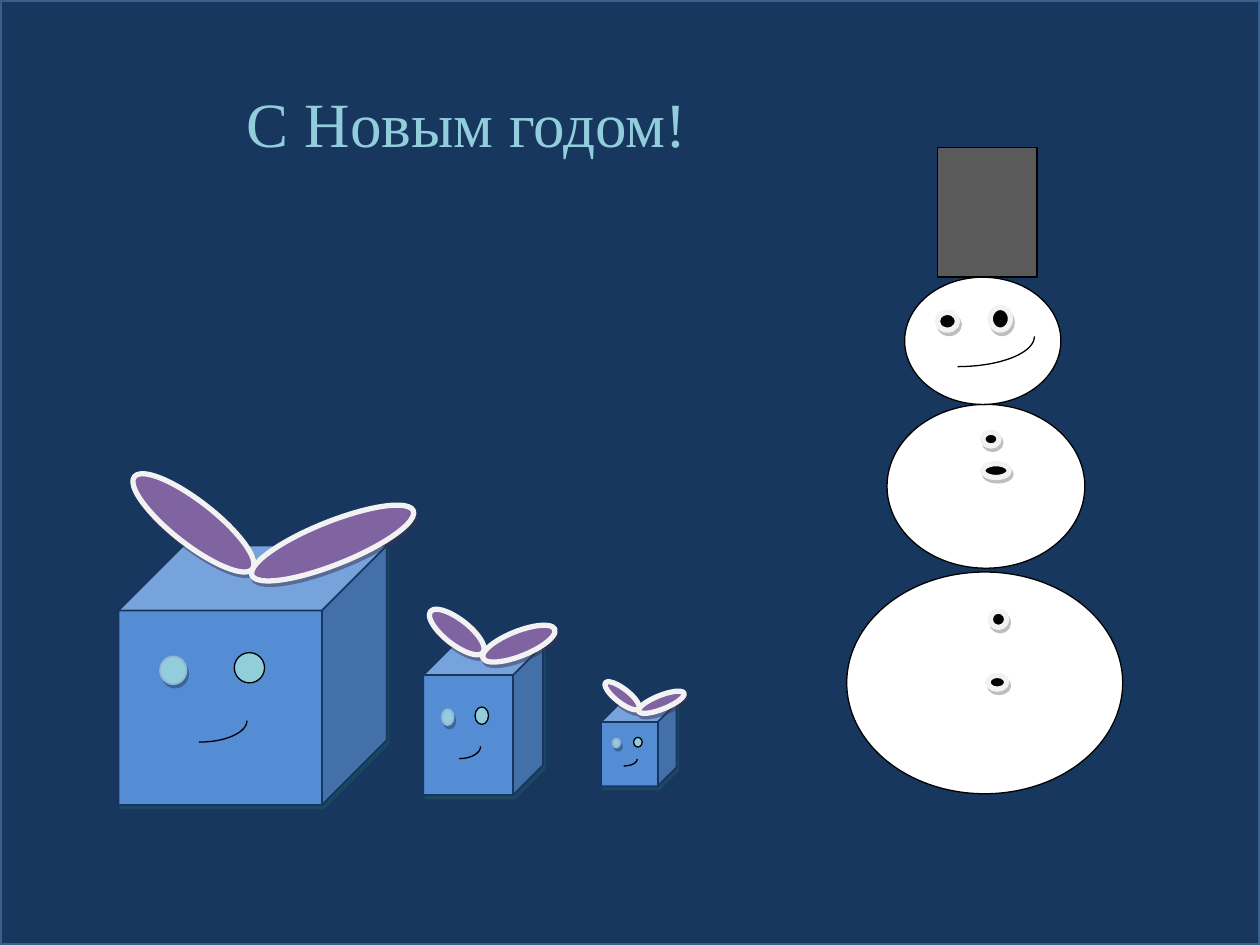
import math

from lxml import etree
from pptx import Presentation
from pptx.dml.color import RGBColor
from pptx.enum.shapes import MSO_SHAPE
from pptx.enum.text import MSO_ANCHOR, PP_ALIGN
from pptx.oxml.ns import qn
from pptx.util import Inches, Pt

RECT = MSO_SHAPE.RECTANGLE
DISC = MSO_SHAPE.FLOWCHART_CONNECTOR
OVAL = MSO_SHAPE.OVAL
CUBE = MSO_SHAPE.CUBE
TOP = MSO_ANCHOR.TOP
CENTER = PP_ALIGN.CENTER

COLORS = {
    "night": "17375E", "frame": "3A5F8C",
    "snow": "FFFFFF", "ink": "000000", "hat": "5A5A5A",
    "rim": "F2F2F2", "button_shadow": "7F7F7F",
    "body": "548DD4", "body_edge": "17365D", "body_shadow": "205867",
    "ear": "8064A2", "ear_shadow": "3F3151",
    "aqua": "92CDDC", "eye_edge": "95B3D7", "eye_shadow": "243F60",
}

# fill, line, line width in points, shadow
LOOKS = {
    "sky": ("night", "frame", 2, None),
    "snowball": ("snow", "ink", 0.75, None),
    "hat": ("hat", "ink", 0.75, None),
    "button": ("ink", "rim", 3, "button_shadow"),
    "body": ("body", "body_edge", 1, "body_shadow"),
    "ear": ("ear", "rim", 3, "ear_shadow"),
    "soft_eye": ("aqua", "eye_edge", 1, "eye_shadow"),
    "bold_eye": ("aqua", "ink", 0.75, None),
}

SNOWBALLS = [(6.72, 4.54, 2.19, 1.76), (7.04, 3.21, 1.57, 1.3), (7.18, 2.2, 1.24, 1.01)]
BUTTONS = [(7.8, 3.43, 0.13, 0.11), (7.8, 3.68, 0.21, 0.11),
           (7.86, 4.85, 0.13, 0.13), (7.84, 5.36, 0.15, 0.11)]
SNOWMAN_HAT = (7.44, 1.17, 0.79, 1.03)
SNOWMAN_EYES = [(7.44, 2.48, 0.16, 0.14), (7.86, 2.44, 0.16, 0.18)]
SNOWMAN_SMILE = (7.6, 2.67, 0.61, 0.24)

# Rabbit features are placed from the corner of a body of this size
BODY_SIZE = (2.13, 2.06)
RABBIT_FEATURES = [
    (CUBE, "body", (0, 0, *BODY_SIZE), 0),
    (OVAL, "ear", (0, -0.35, 1.19, 0.34), 38),
    (OVAL, "ear", (1.01, -0.19, 1.38, 0.34), 338.2),
    (DISC, "soft_eye", (0.33, 0.88, 0.21, 0.22), 0),
    (DISC, "bold_eye", (0.92, 0.85, 0.24, 0.24), 0),
]
RABBIT_SMILE = (0.64, 1.39, 0.38, 0.17)
BIG_RABBIT = (0.94, 4.33, 2.13, 2.06)
SMALL_RABBITS = [(3.36, 5.12, 0.95, 1.19), (4.77, 5.58, 0.6, 0.66)]

TITLE_FONT = {"name": "Times New Roman", "size": Pt(36)}
TITLE_FRAME = {"word_wrap": False, "vertical_anchor": TOP}


def rgb(color):
    return RGBColor.from_string(COLORS[color])


class Card:
    """Holds the slide and the style shared by everything drawn on it."""

    smile_line = ("ink", 0.75)
    smile_steps = 24

    def __init__(self, slide):
        self.slide = slide

    def outline(self, shape, color, width):
        shape.line.color.rgb = rgb(color)
        shape.line.width = Pt(width)

    def shadow(self, shape, color):
        effects = shape._element.spPr.find(qn("a:effectLst"))
        outer = etree.SubElement(effects, qn("a:outerShdw"), blurRad="0",
                                 dist=str(Pt(2.2)), dir=str(63 * 60000),
                                 algn="ctr", rotWithShape="0")
        tint = etree.SubElement(outer, qn("a:srgbClr"), val=COLORS[color])
        etree.SubElement(tint, qn("a:alpha"), val="50000")

    def solid(self, owner, preset, look, box, rotation=0):
        """Filled preset shape on the slide or in a group."""
        fill, line, width, shadow = LOOKS[look]
        shape = owner.shapes.add_shape(preset, *map(Inches, box))
        shape.rotation = rotation
        shape.fill.solid()
        shape.fill.fore_color.rgb = rgb(fill)
        self.outline(shape, line, width)
        shape.shadow.inherit = False
        if shadow:
            self.shadow(shape, shadow)

    def smile(self, owner, box):
        """Quarter ellipse from the bottom left to the top right of the box."""
        left, top, width, height = box
        angles = [math.pi / 2 * i / self.smile_steps for i in range(self.smile_steps + 1)]
        points = [(Inches(left + width * math.sin(a)), Inches(top + height * math.cos(a)))
                  for a in angles]
        builder = owner.shapes.build_freeform(*points[0])
        builder.add_line_segments(points[1:], close=False)
        curve = builder.convert_to_shape()
        curve.fill.background()
        self.outline(curve, *self.smile_line)
        curve.shadow.inherit = False

    def snowman(self):
        group = self.slide.shapes.add_group_shape()
        for ball in SNOWBALLS:
            self.solid(group, DISC, "snowball", ball)
        for button in BUTTONS:
            self.solid(group, DISC, "button", button)
        self.solid(group, RECT, "hat", SNOWMAN_HAT)
        for eye in SNOWMAN_EYES:
            self.solid(group, DISC, "button", eye)
        self.smile(group, SNOWMAN_SMILE)

    def rabbit(self, body):
        left, top, width, height = body
        scale_x, scale_y = width / BODY_SIZE[0], height / BODY_SIZE[1]

        def fit(box):
            x, y, w, h = box
            return left + x * scale_x, top + y * scale_y, w * scale_x, h * scale_y

        group = self.slide.shapes.add_group_shape()
        for preset, look, box, rotation in RABBIT_FEATURES:
            self.solid(group, preset, look, fit(box), rotation)
        self.smile(group, fit(RABBIT_SMILE))

    def title(self, text, box):
        frame = self.slide.shapes.add_textbox(*map(Inches, box)).text_frame
        for name, value in TITLE_FRAME.items():
            setattr(frame, name, value)
        greeting = frame.paragraphs[0]
        greeting.alignment = CENTER
        run = greeting.add_run()
        run.text = text
        for name, value in TITLE_FONT.items():
            setattr(run.font, name, value)
        run.font.color.rgb = rgb("aqua")


def main():
    deck = Presentation()
    deck.slide_width, deck.slide_height = Inches(10), Inches(7.5)
    card = Card(deck.slides.add_slide(deck.slide_layouts[6]))
    card.solid(card.slide, RECT, "sky", (0, 0, 10, 7.5))
    card.snowman()
    card.rabbit(BIG_RABBIT)
    card.title("С Новым годом!", (0.62, 0.62, 6.17, 2.89))
    for body in SMALL_RABBITS:
        card.rabbit(body)
    deck.save("out.pptx")


if __name__ == "__main__":
    main()
